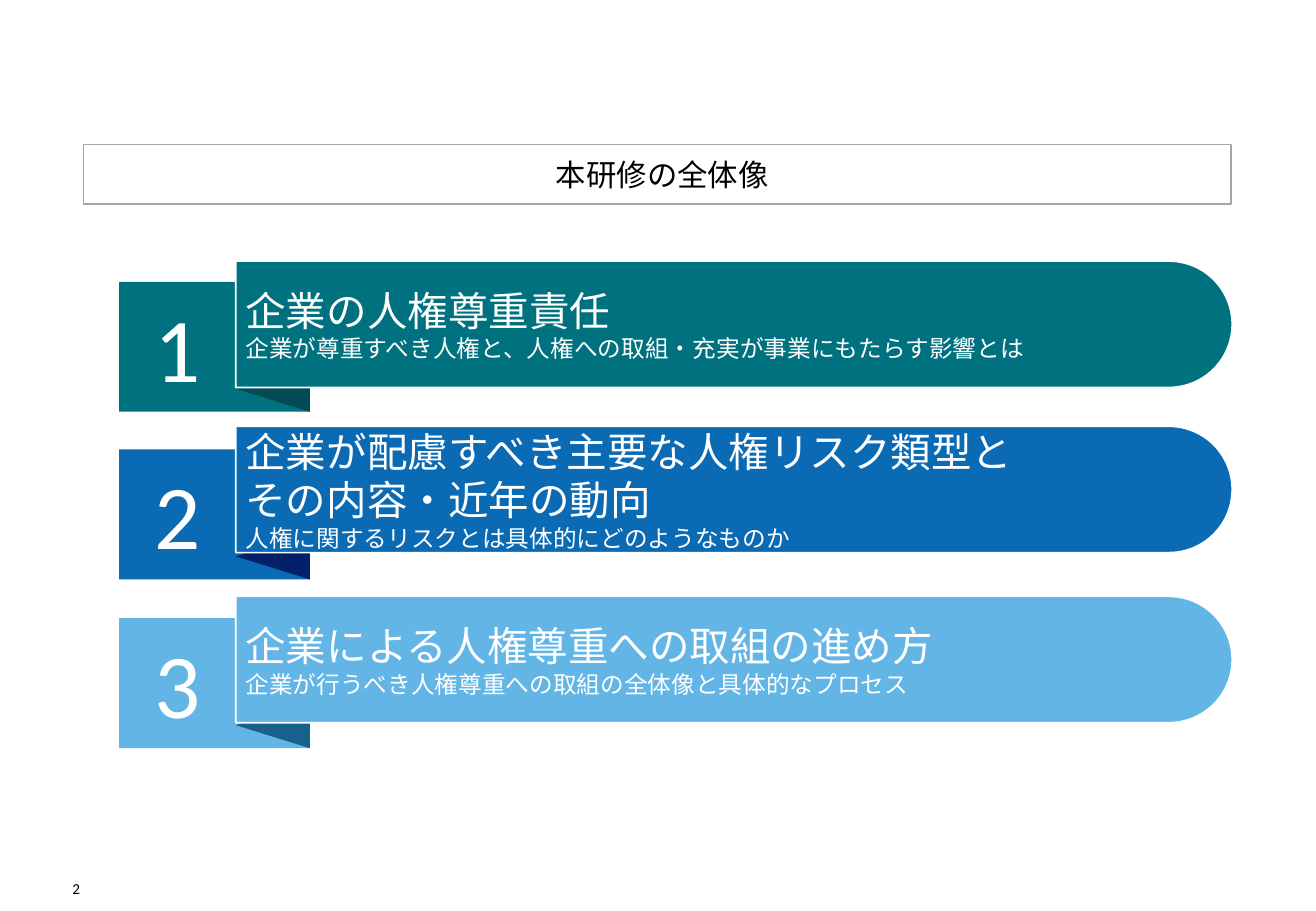
from lxml.etree import SubElement
from pptx import Presentation
from pptx.dml.color import RGBColor
from pptx.enum.shapes import MSO_SHAPE as SHAPE
from pptx.enum.text import MSO_ANCHOR as ANCHOR, PP_ALIGN as ALIGN
from pptx.oxml.ns import qn
from pptx.util import Inches, Pt

COLORS = {
    "teal": "00717F", "teal_fold": "004B54",
    "blue": "0B6AB4", "blue_fold": "012169",
    "sky": "62B5E5", "sky_fold": "17618C",
    "white": "FFFFFF", "black": "000000", "grey": "A6A6A6",
}
FONT = "Calibri"
INSETS = (0.08, 0.08, 0.08, 0.08)

# tab top, rise of the bar above the tab, colour, heading, subheading
CHAPTERS = [
    (2.32, 0.17, "teal", "企業の人権尊重責任",
     "企業が尊重すべき人権と、人権への取組・充実が事業にもたらす影響とは"),
    (3.70, 0.19, "blue", "企業が配慮すべき主要な人権リスク類型と\nその内容・近年の動向",
     "人権に関するリスクとは具体的にどのようなものか"),
    (5.09, 0.18, "sky", "企業による人権尊重への取組の進め方",
     "企業が行うべき人権尊重への取組の全体像と具体的なプロセス"),
]


def rgb(name):
    return RGBColor.from_string(COLORS[name])


def write(sp, lines, color, align=ALIGN.LEFT, anchor=ANCHOR.MIDDLE,
          insets=INSETS, wrap=True):
    """Fill a shape with (text, size) paragraphs."""
    tf = sp.text_frame
    sides = ("margin_left", "margin_top", "margin_right", "margin_bottom")
    layout = {"word_wrap": wrap, "vertical_anchor": anchor}
    layout.update(zip(sides, map(Inches, insets)))
    for name, value in layout.items():
        setattr(tf, name, value)
    for i, (text, size) in enumerate(lines):
        p = tf.add_paragraph() if i else tf.paragraphs[0]
        p.text, p.alignment = text, align
        for r in p.runs:
            for name, value in {"name": FONT, "size": Pt(size)}.items():
                setattr(r.font, name, value)
            r.font.color.rgb = rgb(color)
            SubElement(r._r.get_or_add_rPr(), qn("a:ea"), typeface=FONT)


def add_block(shapes, kind, box, fill=None, line=None, width=1, turn=0):
    """Add a shape whose visible outline, after any quarter turn, is box."""
    x, y, w, h = box
    if turn:
        x, y, w, h = x + (w - h) / 2, y + (h - w) / 2, h, w
    sp = shapes.add_shape(kind, *map(Inches, (x, y, w, h)))
    sp.shadow.inherit = False
    sp.rotation = turn
    if fill:
        sp.fill.solid()
        sp.fill.fore_color.rgb = rgb(fill)
    else:
        sp.fill.background()
    if line:
        sp.line.color.rgb = rgb(line)
        sp.line.width = Pt(width)
    else:
        sp.line.fill.background()
    return sp


def add_text(shapes, box, text, size, color, **options):
    sp = shapes.add_textbox(*map(Inches, box))
    write(sp, [(text, size)], color, **options)


def add_title(s, box):
    sp = add_block(s.shapes, SHAPE.RECTANGLE, box, line="grey", width=0.75)
    write(sp, [("本研修の全体像", 18)], "black", align=ALIGN.CENTER,
          insets=(0.08, 0, 0, 0), wrap=False)


def add_chapter(s, box, rise, number, color, heading, subheading):
    """Draw a numbered tab and its folded ribbon; box spans the tab and the bar's width."""
    x, y, w, h = box
    shapes = s.shapes.add_group_shape().shapes
    add_block(shapes, SHAPE.RECTANGLE, (x, y, 1.57, h), color)
    add_block(shapes, SHAPE.ISOSCELES_TRIANGLE, (x + 0.96, y + h - 0.38, 0.61, 0.38),
              color + "_fold", turn=270)
    bar = add_block(shapes, SHAPE.ROUND_2_SAME_RECTANGLE,
                    (x + 0.96, y - rise, w - 0.96, 1.04), color, "white", turn=90)
    bar.adjustments[0], bar.adjustments[1] = 0.5, 0
    bar._element.txBody.bodyPr.set("vert", "vert270")
    write(bar, [(heading, 24), (subheading, 14)], "white")
    add_text(shapes, (x + 0.07, y - 0.1, 0.83, 1.25), str(number), 54, "white",
             align=ALIGN.CENTER)


def main():
    prs = Presentation()
    prs.slide_width, prs.slide_height = Inches(10.83), Inches(7.5)
    s = prs.slides.add_slide(prs.slide_layouts[6])
    add_text(s.shapes, (0.46, 7.2, 0.2, 0.19), "2", 9, "black", align=ALIGN.RIGHT,
             anchor=ANCHOR.BOTTOM, insets=(0, 0, 0, 0), wrap=False)
    for number, (top, rise, *content) in enumerate(CHAPTERS, 1):
        add_chapter(s, (0.98, top, 9.16, 1.07), rise, number, *content)
    add_title(s, (0.69, 1.19, 9.44, 0.49))
    prs.save("out.pptx")


if __name__ == "__main__":
    main()
